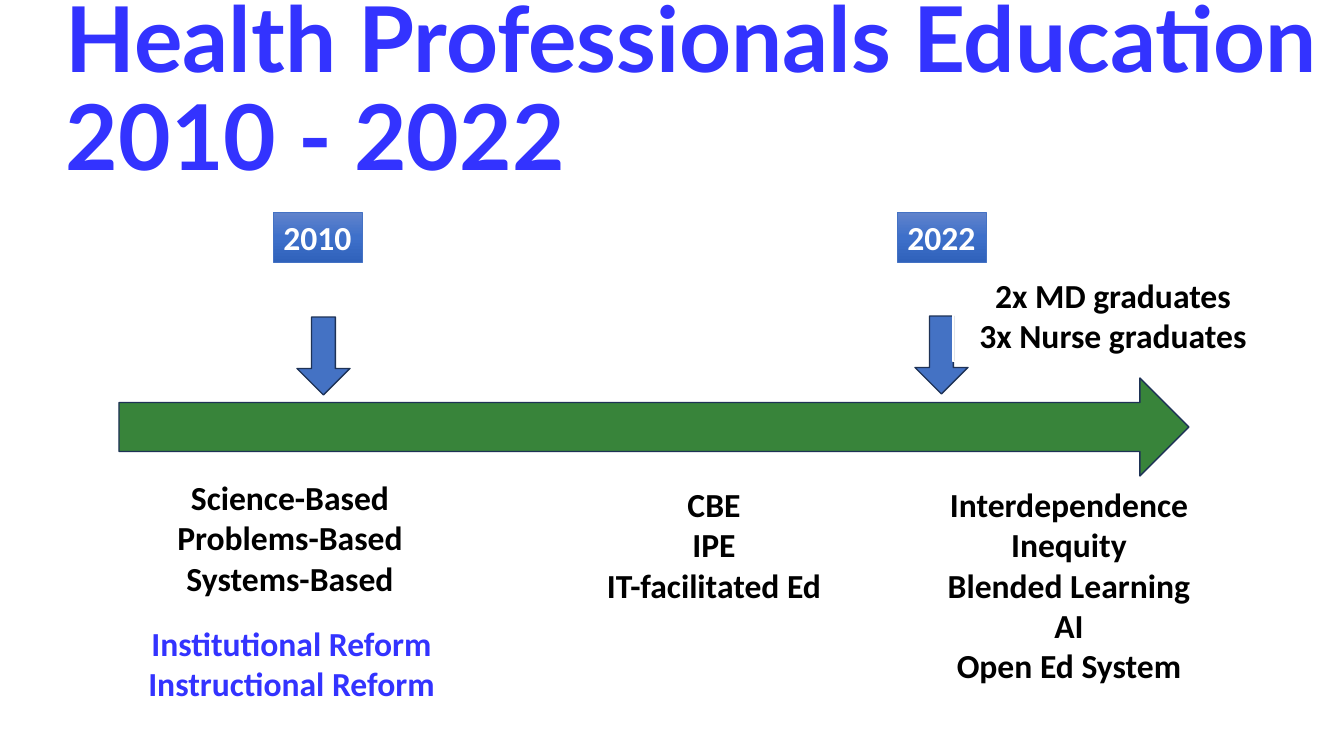
from copy import deepcopy

from pptx import Presentation
from pptx.dml.color import RGBColor
from pptx.enum.shapes import MSO_SHAPE
from pptx.enum.text import MSO_ANCHOR, PP_ALIGN
from pptx.oxml.ns import qn
from pptx.util import Emu, Pt

EMU_PER_PX = 914400 / 100.8

BLACK = RGBColor(0x00, 0x00, 0x00)
WHITE = RGBColor(0xFF, 0xFF, 0xFF)
VIOLET = RGBColor(0x33, 0x33, 0xFF)
GREEN = RGBColor(0x38, 0x84, 0x3A)
BLUE = RGBColor(0x44, 0x72, 0xC4)
NAVY = RGBColor(0x1E, 0x32, 0x56)
BADGE_COLORS = (
    RGBColor(0x61, 0x83, 0xCB),
    RGBColor(0x3E, 0x70, 0xCA),
    RGBColor(0x30, 0x62, 0xBB),
)


def px(length):
    return Emu(round(length * EMU_PER_PX))


def add_text(slide, bounds, lines, color, font="Calibri", size=24, align=PP_ALIGN.CENTER):
    """Add a bold text box with one paragraph per line."""
    box = slide.shapes.add_textbox(*map(px, bounds))
    frame = box.text_frame
    frame.word_wrap = True
    frame.text = "\n".join(lines)
    for para in frame.paragraphs:
        para.alignment = align
        for span in para.runs:
            span.font.name = font
            span.font.size = Pt(size)
            span.font.bold = True
            span.font.color.rgb = color
    return box


def set_line(shape, color, width):
    shape.line.color.rgb = color
    shape.line.width = Pt(width)


def add_title(slide, text):
    box = add_text(slide, (56, 19, 1320, 146), [text], VIOLET,
                   "Lato", 64.8, PP_ALIGN.LEFT)
    box.text_frame.vertical_anchor = MSO_ANCHOR.MIDDLE
    box.text_frame.paragraphs[0].line_spacing = 0.9


def add_note(slide, bounds, lines, color=BLACK):
    """Add a centred note with a thin white outline."""
    set_line(add_text(slide, bounds, lines, color), WHITE, 0.75)


def add_year(slide, left, year):
    """Add a year badge with a vertical three-colour gradient."""
    badge = add_text(slide, (left, 212, 89, 50), [year], WHITE)
    badge.text_frame.word_wrap = False
    set_line(badge, BLUE, 0.5)
    badge.fill.gradient()
    badge.fill.gradient_angle = 270
    stop_list = badge.element.spPr.find(".//" + qn("a:gsLst"))
    stop_list.append(deepcopy(stop_list[0]))
    for index, (stop, color) in enumerate(zip(badge.fill.gradient_stops, BADGE_COLORS)):
        stop.position = index / 2
        stop.color.rgb = color


def add_arrow(slide, kind, bounds, color, adjustments=()):
    arrow = slide.shapes.add_shape(kind, *map(px, bounds))
    arrow.shadow.inherit = False
    arrow.fill.solid()
    arrow.fill.fore_color.rgb = color
    set_line(arrow, NAVY, 1)
    for index, value in enumerate(adjustments):
        arrow.adjustments[index] = value


def main():
    deck = Presentation()
    deck.slide_width, deck.slide_height = px(1344), px(756)
    page = deck.slides.add_slide(deck.slide_layouts[6])

    add_title(page, "Health Professionals Education 2010 - 2022")
    add_arrow(page, MSO_SHAPE.RIGHT_ARROW, (119, 378, 1070, 98), GREEN)
    for left, year in ((273, "2010"), (897, "2022")):
        add_year(page, left, year)
    for left, top in ((297, 317), (915, 316)):
        add_arrow(page, MSO_SHAPE.DOWN_ARROW, (left, top, 53, 78), BLUE, (0.45, 0.5))

    add_note(page, (166, 472, 248, 132),
             ["Science-Based", "Problems-Based", "Systems-Based"])
    add_note(page, (544, 479, 340, 132), ["CBE", "IPE", "IT-facilitated Ed"])
    add_note(page, (923, 479, 292, 214),
             ["Interdependence", "Inequity", "Blended Learning", "AI", "Open Ed System"])
    add_note(page, (129, 618, 325, 92),
             ["Institutional Reform", "Instructional Reform"], VIOLET)
    add_note(page, (953, 270, 320, 92), ["2x MD graduates", "3x Nurse graduates"])

    deck.save("out.pptx")


if __name__ == "__main__":
    main()
